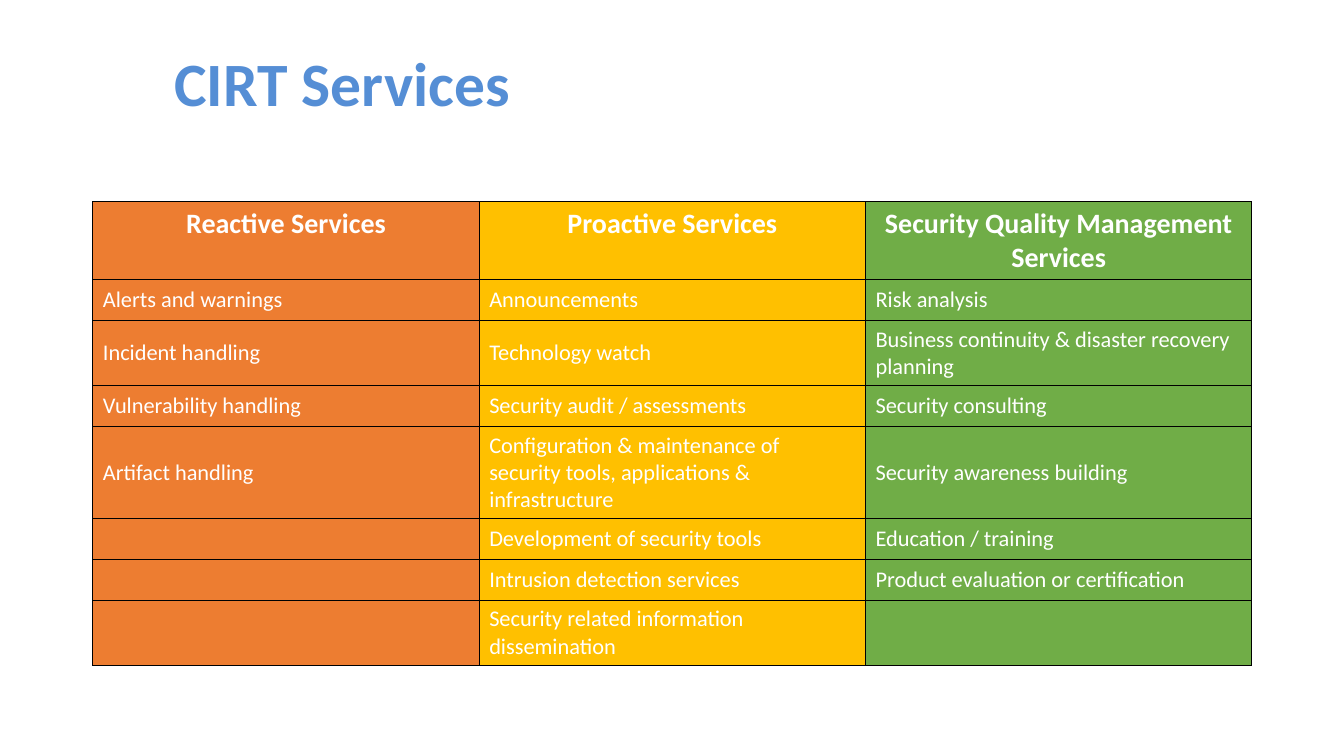
from itertools import zip_longest

from lxml.etree import SubElement
from pptx import Presentation
from pptx.dml.color import RGBColor
from pptx.enum.text import MSO_ANCHOR, PP_ALIGN
from pptx.oxml import parse_xml
from pptx.oxml.ns import nsdecls, qn
from pptx.util import Cm, Pt

BLUE = RGBColor(0x55, 0x8E, 0xD5)
WHITE = RGBColor(0xFF, 0xFF, 0xFF)
BLACK = RGBColor(0x00, 0x00, 0x00)
ORANGE = RGBColor(0xED, 0x7D, 0x31)
AMBER = RGBColor(0xFF, 0xC0, 0x00)
GREEN = RGBColor(0x70, 0xAD, 0x47)

SERVICES = {
    "Reactive Services": (ORANGE, [
        "Alerts and warnings",
        "Incident handling",
        "Vulnerability handling",
        "Artifact handling",
    ]),
    "Proactive Services": (AMBER, [
        "Announcements",
        "Technology watch",
        "Security audit / assessments",
        "Configuration & maintenance of security tools, applications & infrastructure",
        "Development of security tools",
        "Intrusion detection services",
        "Security related information dissemination",
    ]),
    "Security Quality Management Services": (GREEN, [
        "Risk analysis",
        "Business continuity & disaster recovery planning",
        "Security consulting",
        "Security awareness building",
        "Education / training",
        "Product evaluation or certification",
    ]),
}
HEADER_HEIGHT = 1.97
LINE_HEIGHTS = {1: 1.03, 2: 1.64, 3: 2.32}
SERVICE_LINES = [1, 2, 1, 3, 1, 1, 2]


class ServicesSlide:
    title_font = {"name": "Calibri", "size": Pt(44), "bold": True}
    header_font = {"name": "Calibri", "size": Pt(20), "bold": True}
    service_font = {"name": "Calibri", "size": Pt(16), "bold": False}
    border_width = Pt(1)

    def __init__(self, presentation):
        self.slide = presentation.slides.add_slide(presentation.slide_layouts[6])

    def add_text(self, paragraph, text, font_format, color):
        run = paragraph.add_run()
        run.text = text
        for attribute, value in font_format.items():
            setattr(run.font, attribute, value)
        run.font.color.rgb = color

    def title(self, text, left, top, width, height):
        heading = self.slide.shapes.add_textbox(Cm(left), Cm(top), Cm(width), Cm(height))
        frame = heading.text_frame
        frame.word_wrap = True
        frame.vertical_anchor = MSO_ANCHOR.MIDDLE
        frame.paragraphs[0].line_spacing = 0.9
        self.add_text(frame.paragraphs[0], text, self.title_font, BLUE)

    def border(self, cell):
        properties = cell._tc.get_or_add_tcPr()
        for position, side in enumerate(("lnL", "lnR", "lnT", "lnB")):
            line = parse_xml(f'<a:{side} {nsdecls("a")} w="{self.border_width}"/>')
            fill = SubElement(line, qn("a:solidFill"))
            SubElement(fill, qn("a:srgbClr"), val=str(BLACK))
            properties.insert(position, line)

    def cell(self, cell, text, fill_color, is_header):
        cell.fill.solid()
        cell.fill.fore_color.rgb = fill_color
        self.border(cell)
        cell.vertical_anchor = MSO_ANCHOR.TOP if is_header else MSO_ANCHOR.MIDDLE
        if text:
            paragraph = cell.text_frame.paragraphs[0]
            paragraph.alignment = PP_ALIGN.CENTER if is_header else PP_ALIGN.LEFT
            font_format = self.header_font if is_header else self.service_font
            self.add_text(paragraph, text, font_format, WHITE)

    def table(self, services, heights, left, top, width):
        grid = self.slide.shapes.add_table(
            len(heights), len(services), Cm(left), Cm(top), Cm(width), Cm(sum(heights))
        ).table
        grid.first_row = False
        grid.horz_banding = False
        for row, height in zip(grid.rows, heights):
            row.height = Cm(height)
        colors = [color for color, _ in services.values()]
        columns = [[header, *names] for header, (_, names) in services.items()]
        for row_index, texts in enumerate(zip_longest(*columns, fillvalue="")):
            for column_index, (text, color) in enumerate(zip(texts, colors)):
                self.cell(grid.cell(row_index, column_index), text, color, row_index == 0)


def main():
    presentation = Presentation()
    presentation.slide_width = Cm(33.87)
    presentation.slide_height = Cm(19.05)
    services_slide = ServicesSlide(presentation)
    services_slide.title("CIRT Services", 4.14, 0.33, 29.21, 3.68)
    heights = [HEADER_HEIGHT, *(LINE_HEIGHTS[lines] for lines in SERVICE_LINES)]
    services_slide.table(SERVICES, heights, 2.34, 5.08, 29.21)
    presentation.save("out.pptx")


if __name__ == "__main__":
    main()
